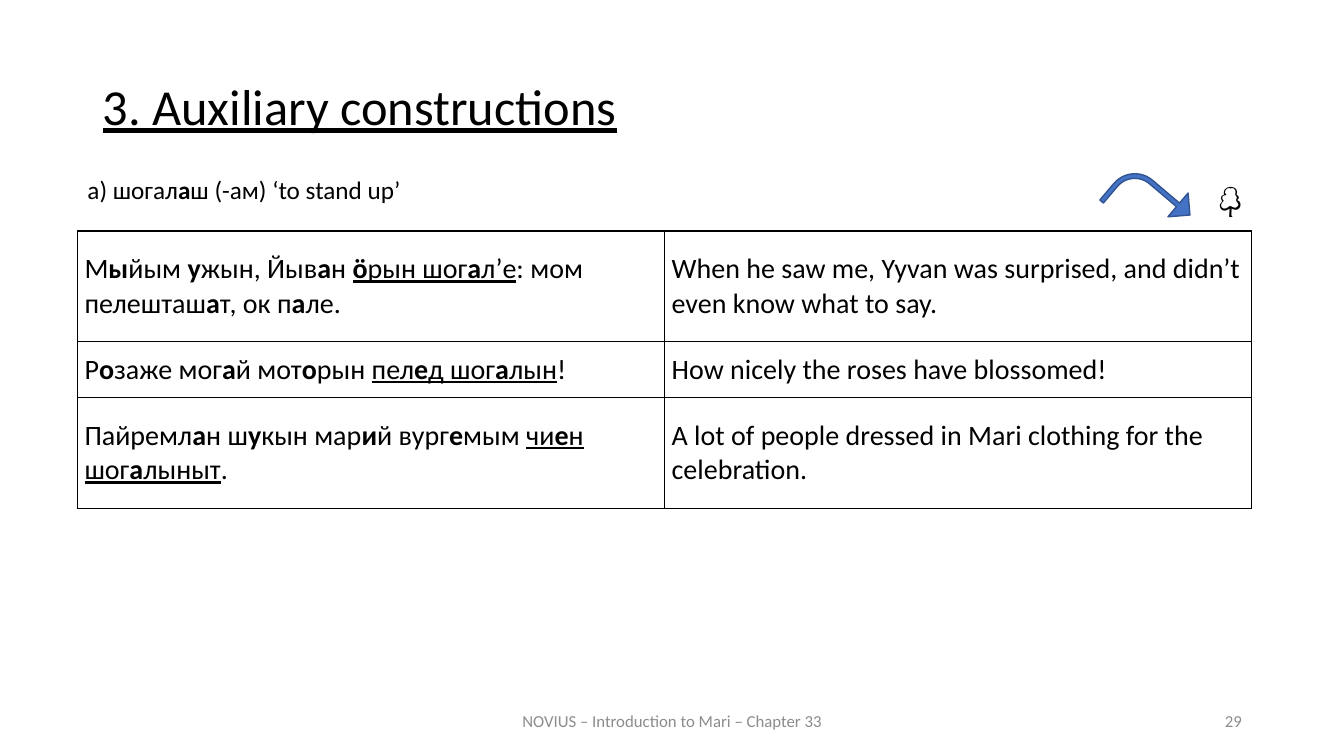
from lxml import etree
from pptx import Presentation
from pptx.dml.color import RGBColor
from pptx.enum.shapes import MSO_SHAPE
from pptx.enum.text import MSO_ANCHOR as ANCHOR, MSO_AUTO_SIZE as AUTOSIZE, PP_ALIGN as ALIGN
from pptx.oxml import parse_xml
from pptx.oxml.ns import nsdecls
from pptx.util import Pt

BLACK = RGBColor(0x00, 0x00, 0x00)
GRAY = RGBColor(0x8C, 0x8C, 0x8C)
BLUE = RGBColor(0x44, 0x72, 0xC4)
DARK_BLUE = RGBColor(0x32, 0x54, 0x91)
FONT = "Calibri"

LEFT, RIGHT = 55.4, 894.2
ROW_HEIGHTS = [79.2, 39.6, 79.2]

# *...* marks a stressed vowel (bold), _..._ an auxiliary construction (underlined)
EXAMPLES = [
    ("М*ы*йым *у*жын, Йыв*а*н _*ӧ*рын шог*а*л’е_: мом пелешташ*а*т, ок п*а*ле.",
     "When he saw me, Yyvan was surprised, and didn’t even know what to say."),
    ("Р*о*заже мог*а*й мот*о*рын _пел*е*д шог*а*лын_!",
     "How nicely the roses have blossomed!"),
    ("Пайремл*а*н ш*у*кын мар*и*й вург*е*мым _чи*е*н шог*а*лыныт_.",
     "A lot of people dressed in Mari clothing for the celebration."),
]


def set_attrs(obj, values):
    for name, value in values.items():
        setattr(obj, name, value)


def write_marked(p, text, size, color=BLACK):
    for i, part in enumerate(text.split("_")):
        for j, piece in enumerate(part.split("*")):
            if piece:
                r = p.add_run()
                r.text = piece
                set_attrs(r.font, {"name": FONT, "size": Pt(size), "bold": j % 2 == 1,
                                   "underline": i % 2 == 1})
                r.font.color.rgb = color


def add_text(slide, box, text, size, color=BLACK, align=ALIGN.LEFT, anchor=ANCHOR.TOP):
    tf = slide.shapes.add_textbox(*map(Pt, box)).text_frame
    set_attrs(tf, {"word_wrap": True, "vertical_anchor": anchor})
    p = tf.paragraphs[0]
    p.alignment = align
    write_marked(p, text, size, color)


def add_title(slide, box, text):
    sp = slide.shapes.title
    set_attrs(sp, dict(zip(("left", "top", "width", "height"), map(Pt, box))))
    tf = sp.text_frame
    set_attrs(tf, {"word_wrap": True, "auto_size": AUTOSIZE.NONE, "vertical_anchor": ANCHOR.TOP})
    p = tf.paragraphs[0]
    set_attrs(p, {"alignment": ALIGN.JUSTIFY, "line_spacing": 0.9, "space_before": Pt(12)})
    write_marked(p, f"_{text}_", 36)


def add_borders(cell):
    tc_pr = cell._tc.get_or_add_tcPr()
    for i, side in enumerate(("lnL", "lnR", "lnT", "lnB")):
        tc_pr.insert(i, parse_xml(
            f'<a:{side} {nsdecls("a")} w="{Pt(1)}"><a:solidFill>'
            f'<a:srgbClr val="{BLACK}"/></a:solidFill></a:{side}>'))


def add_examples(slide, box):
    table = slide.shapes.add_table(len(EXAMPLES), 2, *map(Pt, box)).table
    set_attrs(table, {"first_row": False, "horz_banding": False})
    for col in table.columns:
        col.width = Pt(box[2] / 2)
    for row, height, texts in zip(table.rows, ROW_HEIGHTS, EXAMPLES):
        row.height = Pt(height)
        for cell, text in zip(row.cells, texts):
            set_attrs(cell, {"vertical_anchor": ANCHOR.MIDDLE, "margin_left": Pt(5),
                             "margin_right": Pt(5), "margin_top": 0, "margin_bottom": 0})
            cell.fill.background()
            add_borders(cell)
            write_marked(cell.text_frame.paragraphs[0], text, 20)


def add_tree_cue(slide, box):
    left, top, width, height = box
    # Tree symbol, right-aligned in the box
    add_text(slide, (left + width - 56, top, 56, height), "🌳", 28, align=ALIGN.RIGHT)
    # Arrow bending down towards the tree
    sp = slide.shapes.add_shape(MSO_SHAPE.BENT_ARROW, Pt(left), Pt(top + 0.7), Pt(56), Pt(44.6))
    for i, value in enumerate((0.075, 0.25, 0.25, 0.438)):
        sp.adjustments[i] = value
    sp.rotation = 40.3
    sp.shadow.inherit = False
    sp.fill.solid()
    sp.fill.fore_color.rgb = BLUE
    sp.line.color.rgb = DARK_BLUE
    sp.line.width = Pt(1)


def add_footer(slide, box):
    left, top, width, height = box
    style = {"size": 12, "color": GRAY, "anchor": ANCHOR.MIDDLE}
    add_text(slide, (left, top, 324, height), "NOVIUS – Introduction to Mari – Chapter 33",
             align=ALIGN.CENTER, **style)
    add_text(slide, (left + width - 216, top, 216, height), "29", align=ALIGN.RIGHT, **style)


def build_slide(prs):
    slide = prs.slides.add_slide(prs.slide_layouts[5])
    add_title(slide, (66.2, 54.7, 828, 59.8), "3. Auxiliary constructions")
    add_text(slide, (LEFT, 121, 383, 29), "a) шогал*а*ш (-ам) ‘to stand up’", 18)
    add_examples(slide, (LEFT, 165, RIGHT - LEFT, sum(ROW_HEIGHTS)))
    add_tree_cue(slide, (793.4, 121, RIGHT - 793.4, 41))
    add_footer(slide, (318.2, 500.4, RIGHT - 318.2, 28.8))


def main():
    prs = Presentation()
    set_attrs(prs, {"slide_width": Pt(960), "slide_height": Pt(540)})
    build_slide(prs)
    prs.save("out.pptx")


if __name__ == "__main__":
    main()
